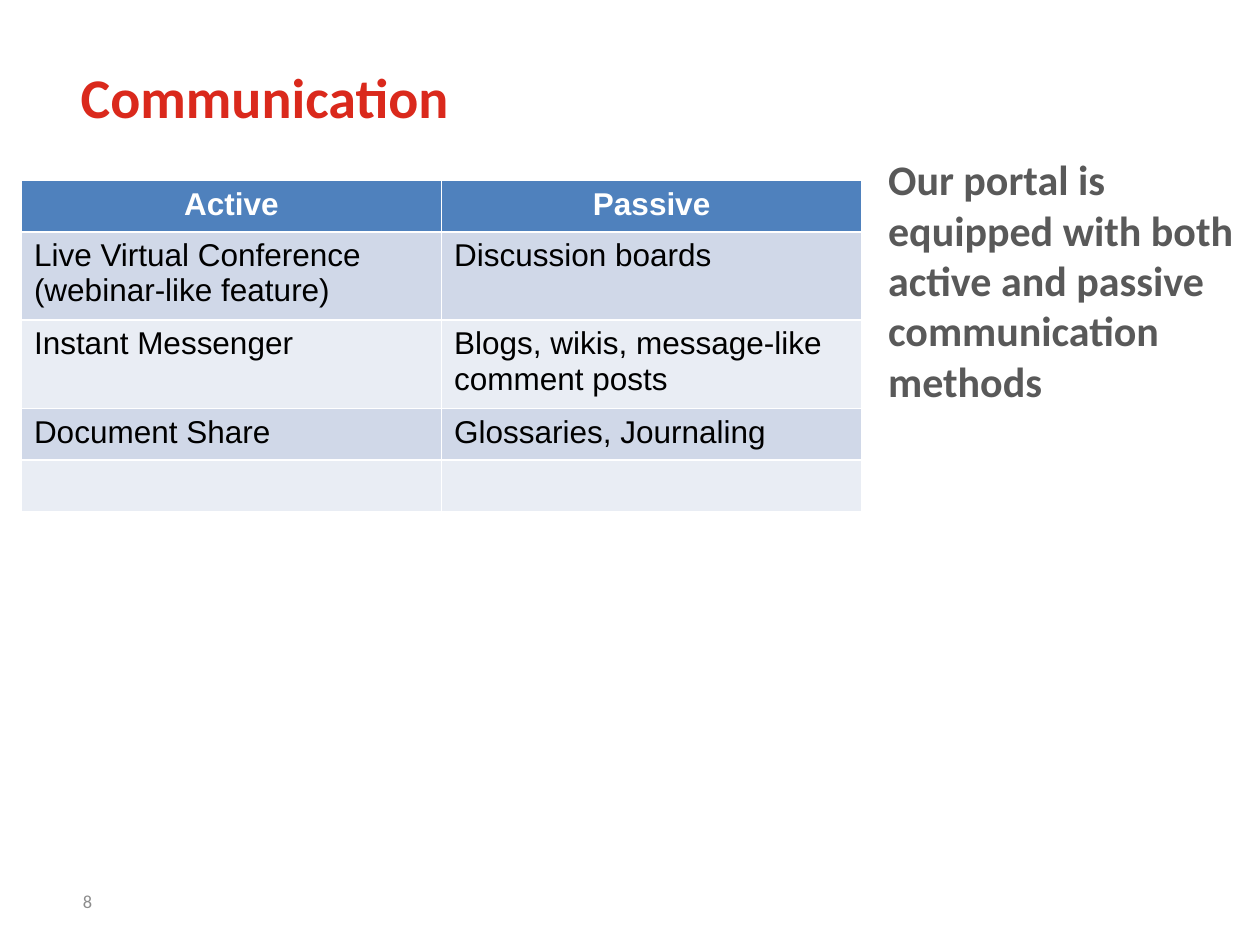
from pptx import Presentation
from pptx.util import Inches, Pt
from pptx.dml.color import RGBColor as Rgb
from pptx.enum.text import PP_ALIGN as Align, MSO_ANCHOR as Anchor

TITLE = "Communication"
NOTE = "Our portal is equipped with both active and passive communication methods"
PAGE = "8"
ROWS = [
    ("Active", "Passive"),
    ("Live Virtual Conference (webinar-like feature)", "Discussion boards"),
    ("Instant Messenger", "Blogs, wikis, message-like comment posts"),
    ("Document Share", "Glossaries, Journaling"),
    ("", ""),
]
HUES = {
    "red": "DA291C", "gray": "595959", "pale": "8C8C8C", "white": "FFFFFF",
    "black": "000000", "head": "4F81BD", "odd": "D0D8E8", "even": "E9EDF4",
}
FONTS = {
    "title": ("red", {"name": "Calibri", "size": Pt(32), "bold": True}),
    "note": ("gray", {"name": "Calibri", "size": Pt(24), "bold": True}),
    "page": ("pale", {"name": "Calibri", "size": Pt(10.5), "bold": False}),
    "head": ("white", {"name": "Arial", "size": Pt(18), "bold": True}),
    "cell": ("black", {"name": "Arial", "size": Pt(18), "bold": False}),
}
BOXES = {
    "title": (0.54, 0.4, 9, 0.73),
    "page": (0.56, 6.95, 2.33, 0.4),
    "note": (6.95, 1.17, 3.05, 4.48),
    "table": (0.17, 1.43, 6.67, 2.05),
}


def hue(key):
    return Rgb.from_string(HUES[key])


def place(kind):
    return [Inches(n) for n in BOXES[kind]]


def write(frame, text, kind, align=Align.LEFT, anchor=Anchor.TOP):
    frame.word_wrap = True
    frame.vertical_anchor = anchor
    line = frame.paragraphs[0]
    line.alignment = align
    run = line.add_run()
    run.text = text
    tint, form = FONTS[kind]
    for key, val in form.items():
        setattr(run.font, key, val)
    run.font.color.rgb = hue(tint)


def main():
    deck = Presentation()
    deck.slide_width, deck.slide_height = Inches(10), Inches(7.5)
    slide = deck.slides.add_slide(deck.slide_layouts[5])
    shapes = slide.shapes

    title = shapes.title
    for key, val in zip(("left", "top", "width", "height"), place("title")):
        setattr(title, key, val)
    write(title.text_frame, TITLE, "title", anchor=Anchor.MIDDLE)

    for kind, text, anchor in (("page", PAGE, Anchor.MIDDLE), ("note", NOTE, Anchor.TOP)):
        write(shapes.add_textbox(*place(kind)).text_frame, text, kind, anchor=anchor)

    table = shapes.add_table(len(ROWS), len(ROWS[0]), *place("table")).table
    for r, row in enumerate(ROWS):
        band = "head" if r == 0 else "odd" if r % 2 else "even"
        kind, align = ("head", Align.CENTER) if r == 0 else ("cell", Align.LEFT)
        for c, text in enumerate(row):
            cell = table.cell(r, c)
            cell.fill.solid()
            cell.fill.fore_color.rgb = hue(band)
            if text:
                write(cell.text_frame, text, kind, align)

    deck.save("out.pptx")


if __name__ == "__main__":
    main()
